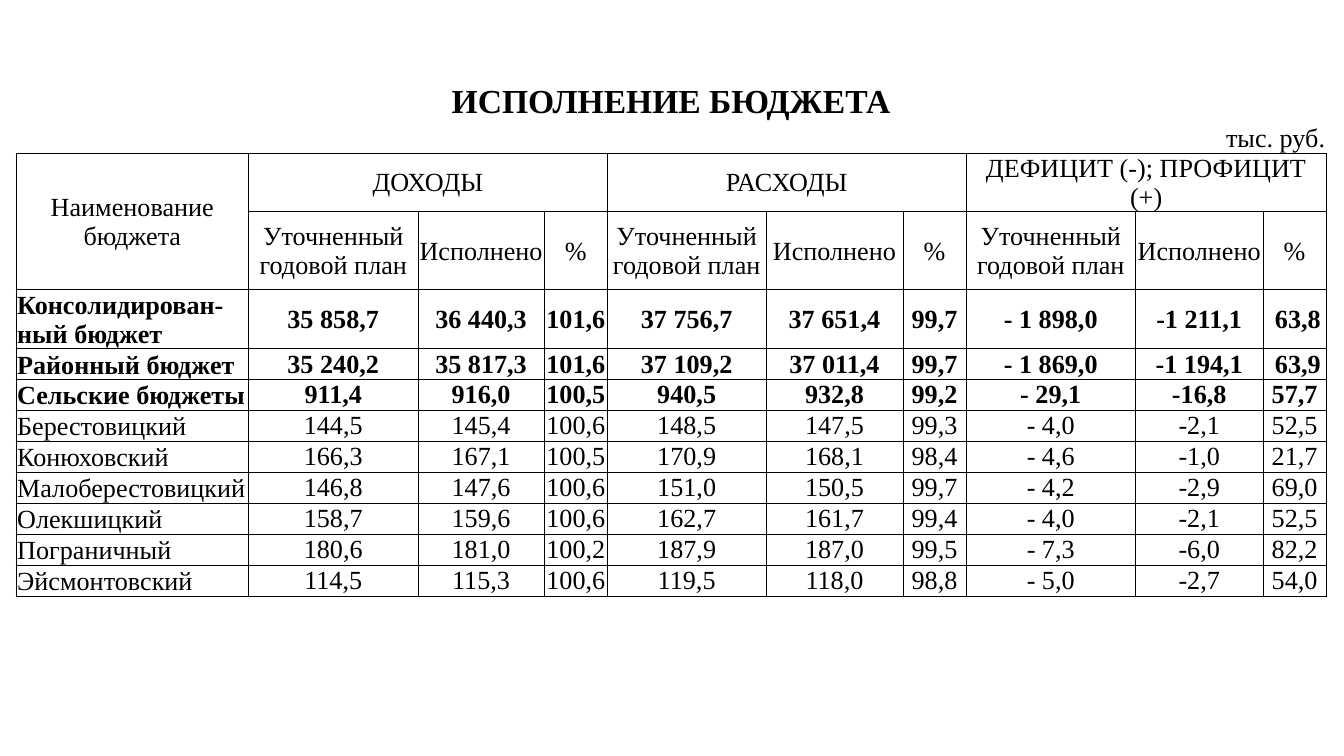
from dataclasses import dataclass

from lxml.etree import SubElement
from pptx import Presentation
from pptx.dml.color import RGBColor
from pptx.enum.text import MSO_ANCHOR, PP_ALIGN
from pptx.oxml.ns import qn
from pptx.table import Table, _Cell
from pptx.util import Inches, Pt

BLACK = RGBColor(0, 0, 0)
FONT_NAME = "Times New Roman"
TEXT_SIZE = 14
INSET = Pt(0.55)
BORDER_WIDTH = Pt(0.5)
ALL_SIDES = "LRTB"

COLUMN_WIDTHS = [1.73, 1.01, 0.25, 0.65, 0.29, 0.47, 1.18, 0.21, 0.81, 0.09,
                 0.38, 1.26, 0.52, 0.43, 0.47]
ROW_HEIGHTS = [0.25, 0.21, 0.42, 0.58, 0.21, 0.21, 0.07, 0.21, 0.21, 0.05,
               0.21, 0.21, 0.21]
UNIT_SPANS = [(2, 3), (4, 5), (6, 7), (8, 9), (11, 12), (13, 14)]
VALUE_SPANS = [(1, 2), (3, 4), (5, 5), (6, 6), (7, 8), (9, 10), (11, 11),
               (12, 13), (14, 14)]
GROUPS = [("ДОХОДЫ", 1, 5), ("РАСХОДЫ", 6, 10), ("ДЕФИЦИТ (-); ПРОФИЦИТ (+)", 11, 14)]
SUBHEADINGS = ["Уточненный годовой план", "Исполнено", "%"] * 3
FIRST_BUDGET_ROW = 4


@dataclass(frozen=True)
class Budget:
    name: str
    values: list[str]
    bold: bool = False


BUDGETS = [
    Budget("Консолидирован-ный бюджет",
           ["35 858,7", "36 440,3", "101,6", "37 756,7", "37 651,4", "99,7",
            "- 1 898,0", "-1 211,1", " 63,8"], True),
    Budget("Районный бюджет",
           ["35 240,2", "35 817,3", "101,6", "37 109,2", "37 011,4", "99,7",
            "- 1 869,0", "-1 194,1", " 63,9"], True),
    Budget("Сельские бюджеты",
           ["911,4", "916,0", "100,5", "940,5", "932,8", "99,2", "- 29,1", "-16,8", "57,7"], True),
    Budget("Берестовицкий",
           ["144,5", "145,4", "100,6", "148,5", "147,5", "99,3", "- 4,0", "-2,1", "52,5"]),
    Budget("Конюховский",
           ["166,3", "167,1", "100,5", "170,9", "168,1", "98,4", "- 4,6", "-1,0", "21,7"]),
    Budget("Малоберестовицкий",
           ["146,8", "147,6", "100,6", "151,0", "150,5", "99,7", "- 4,2", "-2,9", "69,0"]),
    Budget("Олекшицкий",
           ["158,7", "159,6", "100,6", "162,7", "161,7", "99,4", "- 4,0", "-2,1", "52,5"]),
    Budget("Пограничный",
           ["180,6", "181,0", "100,2", "187,9", "187,0", "99,5", "- 7,3", "-6,0", "82,2"]),
    Budget("Эйсмонтовский",
           ["114,5", "115,3", "100,6", "119,5", "118,0", "98,8", "- 5,0", "-2,7", "54,0"]),
]


def set_borders(cell: _Cell, visible_sides: str) -> None:
    properties = cell._tc.get_or_add_tcPr()
    for side in ALL_SIDES:
        line = SubElement(properties, qn(f"a:ln{side}"), w=str(BORDER_WIDTH))
        if side in visible_sides:
            fill = SubElement(line, qn("a:solidFill"))
            SubElement(fill, qn("a:srgbClr"), val=str(BLACK))
        else:
            SubElement(line, qn("a:noFill"))


def prepare_cells(table: Table) -> None:
    for row_index, row in enumerate(table.rows):
        visible_sides = {0: "", 1: "B"}.get(row_index, ALL_SIDES)
        for cell in row.cells:
            set_borders(cell, visible_sides)
            cell.fill.background()
            cell.margin_left = cell.margin_right = INSET
            cell.margin_top = INSET
            cell.margin_bottom = INSET if row_index >= FIRST_BUDGET_ROW else 0
            SubElement(cell.text_frame.paragraphs[0]._p, qn("a:endParaRPr"),
                       sz=str(TEXT_SIZE * 100))


def merge_columns(table: Table, row: int, first: int, last: int) -> None:
    if last > first:
        table.cell(row, first).merge(table.cell(row, last))


def write_cell(cell: _Cell, text: str, bold: bool = False, size: int = TEXT_SIZE,
               alignment: PP_ALIGN = PP_ALIGN.CENTER,
               anchor: MSO_ANCHOR = MSO_ANCHOR.MIDDLE) -> None:
    cell.text_frame.text = text
    cell.vertical_anchor = anchor
    for paragraph in cell.text_frame.paragraphs:
        paragraph.alignment = alignment
        for run in paragraph.runs:
            run.font.name = FONT_NAME
            run.font.size = Pt(size)
            run.font.bold = bold
            run.font.color.rgb = BLACK


def write_values(table: Table, row: int, values: list[str], bold: bool = False) -> None:
    for (first, last), value in zip(VALUE_SPANS, values):
        merge_columns(table, row, first, last)
        write_cell(table.cell(row, first), value, bold)


def write_headings(table: Table) -> None:
    merge_columns(table, 0, 0, len(COLUMN_WIDTHS) - 1)
    write_cell(table.cell(0, 0), "ИСПОЛНЕНИЕ БЮДЖЕТА", True, 18)
    for first, last in UNIT_SPANS:
        merge_columns(table, 1, first, last)
    write_cell(table.cell(1, 13), "тыс. руб.", alignment=PP_ALIGN.RIGHT,
               anchor=MSO_ANCHOR.BOTTOM)
    table.cell(2, 0).merge(table.cell(3, 0))
    write_cell(table.cell(2, 0), "Наименование\nбюджета")
    for text, first, last in GROUPS:
        merge_columns(table, 2, first, last)
        write_cell(table.cell(2, first), text)
    write_values(table, 3, SUBHEADINGS)


def write_budgets(table: Table) -> None:
    for row, budget in enumerate(BUDGETS, FIRST_BUDGET_ROW):
        name_cell = table.cell(row, 0)
        write_cell(name_cell, budget.name, budget.bold, alignment=PP_ALIGN.LEFT,
                   anchor=MSO_ANCHOR.BOTTOM)
        name_cell.margin_bottom = 0
        write_values(table, row, budget.values, budget.bold)


def main() -> None:
    presentation = Presentation()
    presentation.slide_width = Inches(10)
    presentation.slide_height = Inches(10 * 9 / 16)
    slide = presentation.slides.add_slide(presentation.slide_layouts[6])
    table_shape = slide.shapes.add_table(
        len(ROW_HEIGHTS), len(COLUMN_WIDTHS),
        Inches(0.12), Inches(0.61), Inches(9.76), Inches(4.02))
    table = table_shape.table
    table.first_row = False
    table.horz_banding = False
    for column, width in zip(table.columns, COLUMN_WIDTHS):
        column.width = Inches(width)
    for row, height in zip(table.rows, ROW_HEIGHTS):
        row.height = Inches(height)
    table_shape.height = Inches(4.02)
    prepare_cells(table)
    write_headings(table)
    write_budgets(table)
    presentation.save("out.pptx")


if __name__ == "__main__":
    main()
